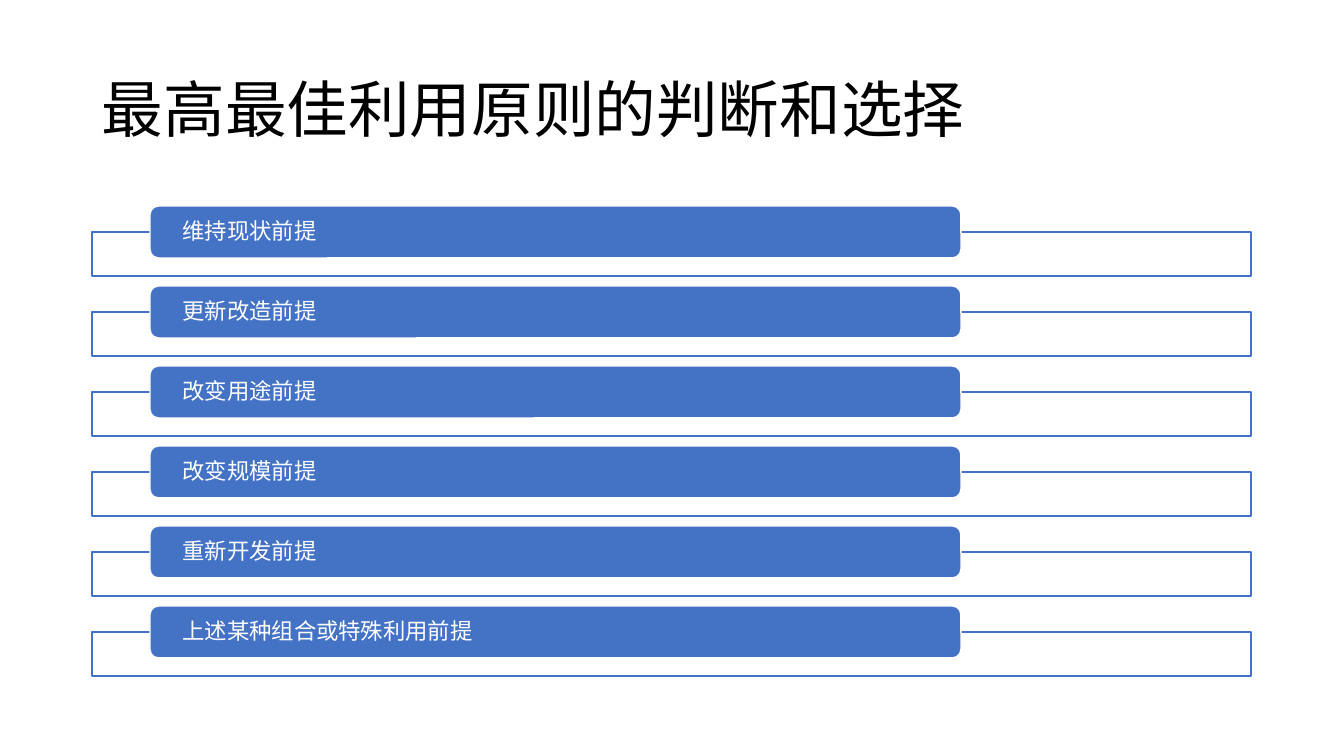
"""Build a slide that lists six premises of the highest and best use principle."""
from lxml.etree import SubElement
from pptx import Presentation
from pptx.dml.color import RGBColor
from pptx.enum.shapes import MSO_SHAPE
from pptx.enum.text import MSO_ANCHOR, PP_ALIGN
from pptx.oxml.ns import qn
from pptx.util import Pt

PX = 914400 / 100.8
FONT = "Noto Sans CJK SC"
HUES = {
    "blue": RGBColor.from_string("4472C4"),
    "white": RGBColor.from_string("FFFFFF"),
    "black": RGBColor.from_string("000000"),
}
ITEMS = [
    "维持现状前提",
    "更新改造前提",
    "改变用途前提",
    "改变规模前提",
    "重新开发前提",
    "上述某种组合或特殊利用前提",
]
PITCH = 80


def px(*nums):
    return [round(n * PX) for n in nums]


def write(shape, text, size, hue, inset, edge):
    frame = shape.text_frame
    frame.word_wrap = True
    frame.vertical_anchor = MSO_ANCHOR.MIDDLE
    frame.margin_left, frame.margin_right = px(inset, inset)
    frame.margin_top, frame.margin_bottom = px(edge, edge)
    para = frame.paragraphs[0]
    para.alignment = PP_ALIGN.LEFT
    para.line_spacing = 0.9
    run = para.add_run()
    run.text = text
    run.font.size = Pt(size)
    run.font.name = FONT
    run.font.color.rgb = HUES[hue]
    SubElement(run.font._element, qn("a:ea"), typeface=FONT)


deck = Presentation()
deck.slide_width, deck.slide_height = px(1344, 756)
slide = deck.slides.add_slide(deck.slide_layouts[5])

title = slide.shapes.title
title.left, title.top, title.width, title.height = px(92, 40, 1159, 146)
write(title, "最高最佳利用原则的判断和选择", size=44, hue="black", inset=10, edge=5)

for row, item in enumerate(ITEMS):
    drop = row * PITCH
    frame = slide.shapes.add_shape(
        MSO_SHAPE.RECTANGLE, *px(92, 232 + drop, 1159, 44))
    bar = slide.shapes.add_shape(
        MSO_SHAPE.ROUNDED_RECTANGLE, *px(150, 206 + drop, 811, 52))
    for shape, fill, line in ((frame, "white", "blue"), (bar, "blue", "white")):
        shape.shadow.inherit = False
        shape.fill.solid()
        shape.fill.fore_color.rgb = HUES[fill]
        shape.line.color.rgb = HUES[line]
        shape.line.width = Pt(1)
    tint = frame._element.spPr.find(qn("a:solidFill")).find(qn("a:srgbClr"))
    SubElement(tint, qn("a:alpha"), val="90000")
    write(bar, item, size=16, hue="white", inset=30, edge=0)

deck.save("out.pptx")
